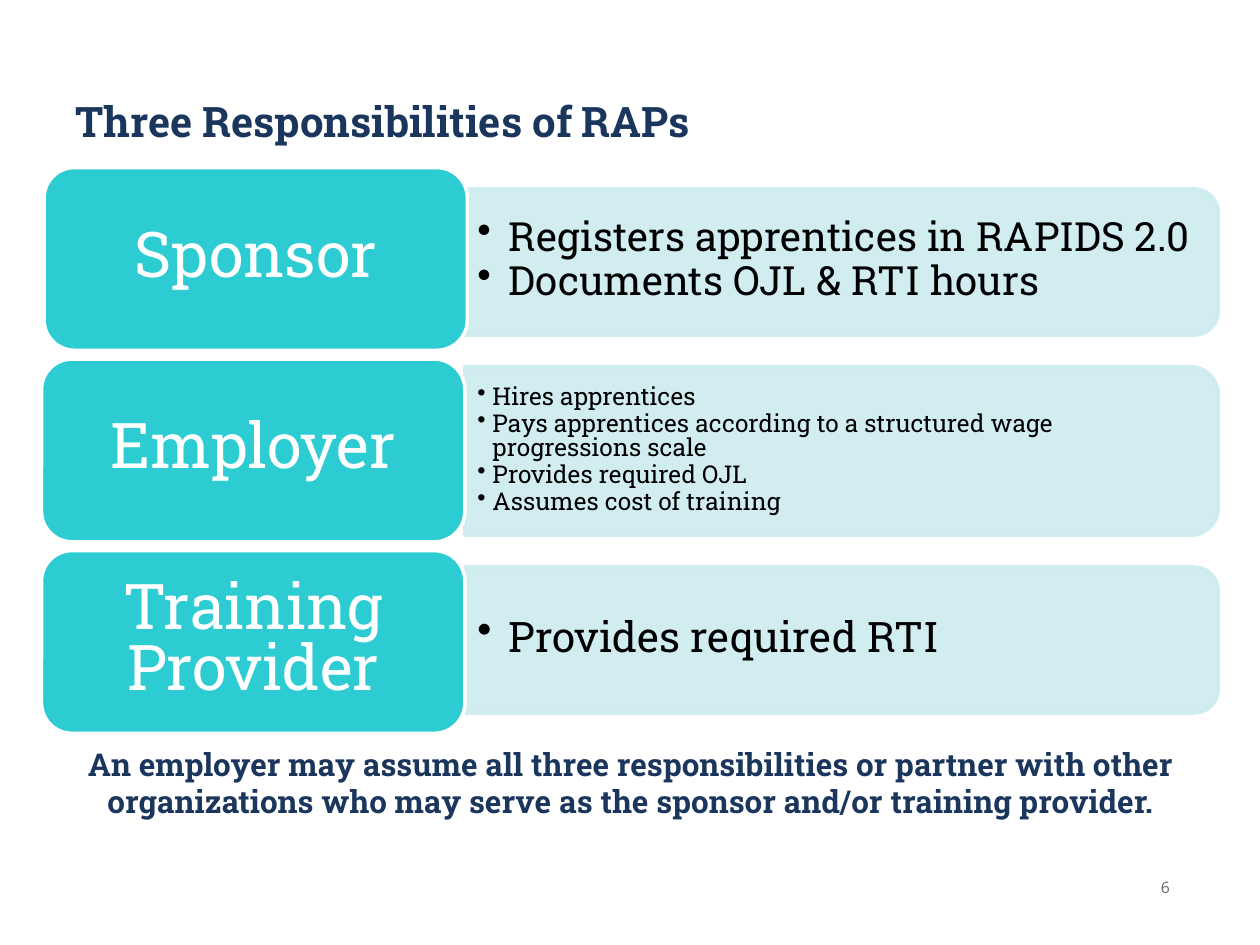
from lxml import etree
from pptx import Presentation
from pptx.dml.color import RGBColor
from pptx.enum.shapes import MSO_SHAPE as Shape
from pptx.enum.text import MSO_ANCHOR as Anchor, PP_ALIGN as Align
from pptx.oxml.ns import qn
from pptx.util import Inches, Pt

NAVY, TEAL, PALE = "1B365D", "2DCCD3", "CDECEF"
WHITE, BLACK, GREY = "FFFFFF", "000000", "666666"


def rgb(code):
    return RGBColor.from_string(code)


def fade(fill, pct):
    """Make a solid fill partly transparent; pct is its opacity."""
    color = fill.find(".//" + qn("a:srgbClr"))
    etree.SubElement(color, qn("a:alpha"), val=str(pct * 1000))


class Deck:
    """Holds the style and the current slide."""

    font = "Roboto Slab"
    tight = 0.8

    def __init__(self, width, height):
        self.prs = Presentation()
        self.prs.slide_width = Inches(width)
        self.prs.slide_height = Inches(height)
        self.slide = self.prs.slides.add_slide(self.prs.slide_layouts[6])

    def label(self, shape, lines, size, color, bold=False, font=None,
              align=Align.LEFT, anchor=Anchor.MIDDLE, pad=(0.1, 0.05),
              indent=0, spacing=None, after=0):
        """Put styled lines of text into a shape."""
        frame = shape.text_frame
        frame.word_wrap = True
        frame.vertical_anchor = anchor
        frame.margin_left = frame.margin_right = Inches(pad[0])
        frame.margin_top = frame.margin_bottom = Inches(pad[1])
        frame.text = "\n".join(lines)
        for para in frame.paragraphs:
            para.alignment = align
            para.space_after = Pt(after)
            if spacing:
                para.line_spacing = spacing
            if indent:
                self.bullet(para, indent)
            for run in para.runs:
                run.font.name = font or self.font
                run.font.size = Pt(size)
                run.font.bold = bold
                run.font.color.rgb = rgb(color)

    def bullet(self, para, indent):
        props = para._p.get_or_add_pPr()
        props.set("marL", str(Inches(indent)))
        props.set("indent", str(-Inches(indent)))
        etree.SubElement(props, qn("a:buChar"), char="•")

    def text(self, box, lines, size, color, **style):
        shape = self.slide.shapes.add_textbox(*map(Inches, box))
        self.label(shape, lines, size, color, **style)

    def block(self, kind, box, fill, line):
        shape = self.slide.shapes.add_shape(kind, *map(Inches, box))
        shape.shadow.inherit = False
        shape.fill.solid()
        shape.fill.fore_color.rgb = rgb(fill)
        shape.line.color.rgb = rgb(line)
        shape.line.width = Pt(2)
        return shape

    def panel(self, left, mid, width, height, lines, size, indent):
        """Bulleted strip with its round corners on the right."""
        box = (left + (width - height) / 2, mid - width / 2, height, width)
        shape = self.block(Shape.ROUND_2_SAME_RECTANGLE, box, PALE, PALE)
        shape.rotation = 90
        for fill in shape._element.spPr.iter(qn("a:solidFill")):
            fade(fill, 90)
        inner = height - 0.12
        self.text((left, mid - inner / 2, width - 0.06, inner), lines, size,
                  BLACK, indent=indent, spacing=self.tight,
                  after=0.15 * size)

    def card(self, box, name):
        shape = self.block(Shape.ROUNDED_RECTANGLE, box, TEAL, WHITE)
        self.label(shape, [name], 36, WHITE, align=Align.CENTER,
                   pad=(0.15, 0.07), spacing=self.tight)


def main():
    deck = Deck(10, 7.5)
    deck.text((0.5, 0.33, 9, 1.25), ["Three Responsibilities of RAPs"],
              24, NAVY, bold=True)

    # name, card left, panel height, size, indent, duties
    roles = [
        ("Sponsor", 0.35, 1.16, 23, 0.25,
         ["Registers apprentices in RAPIDS 2.0",
          "Documents OJL & RTI hours"]),
        ("Employer", 0.33, 1.34, 14, 0.12,
         ["Hires apprentices",
          "Pays apprentices according to a structured wage "
          "progressions scale",
          "Provides required OJL",
          "Assumes cost of training"]),
        ("Training Provider", 0.33, 1.16, 24, 0.25,
         ["Provides required RTI"]),
    ]
    for row, (name, left, height, size, indent, duties) in enumerate(roles):
        deck.panel(3.69, 2.08 + 1.5 * row, 5.98, height, duties, size, indent)
        deck.card((left, 1.33 + 1.52 * row, 3.36, 1.45), name)

    deck.text((0.51, 5.86, 8.99, 0.71),
              ["An employer may assume all three responsibilities or partner "
               "with other organizations who may serve as the sponsor and/or "
               "training provider."],
              18, NAVY, bold=True, align=Align.CENTER, anchor=Anchor.TOP)
    deck.text((9, 6.83, 0.5, 0.42), ["6"], 9, GREY, font="Open Sans",
              align=Align.CENTER)
    deck.prs.save("out.pptx")


if __name__ == "__main__":
    main()
